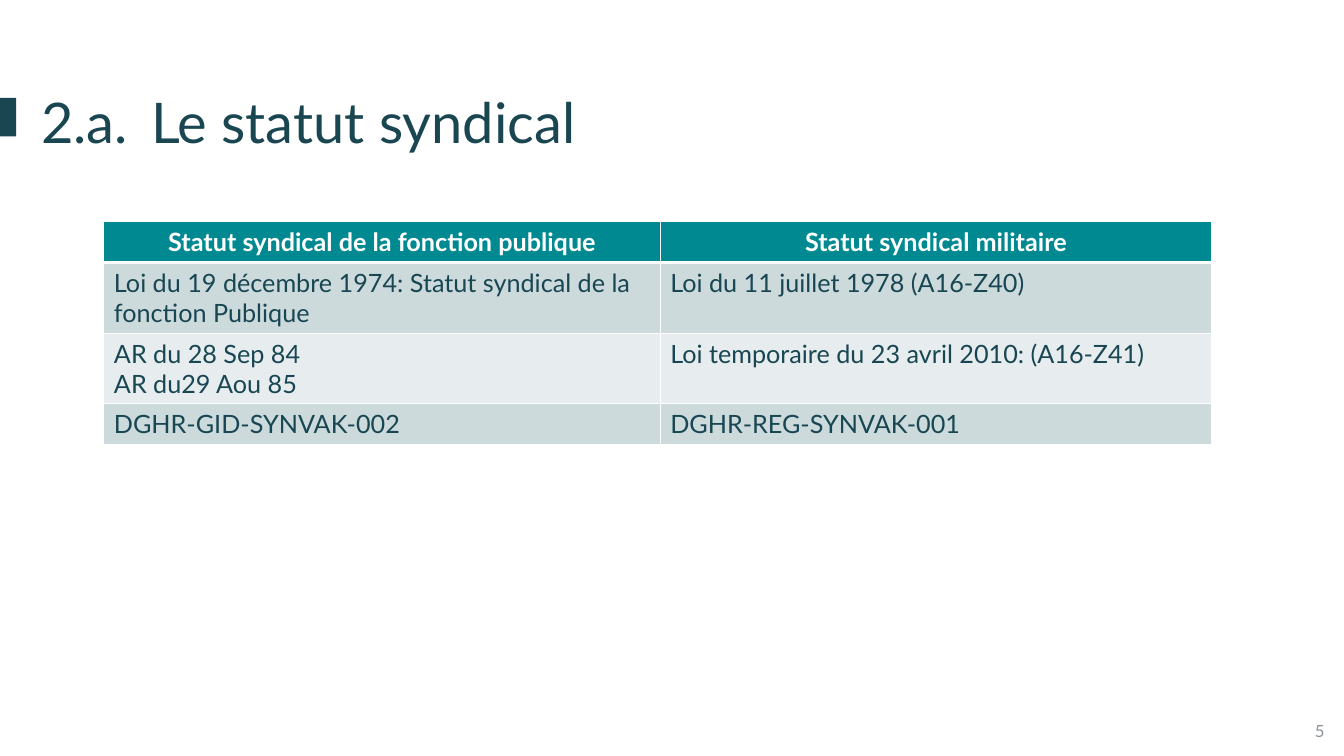
from dataclasses import dataclass

from lxml.etree import SubElement
from pptx import Presentation
from pptx.dml.color import RGBColor
from pptx.enum.shapes import MSO_SHAPE
from pptx.enum.text import MSO_ANCHOR, MSO_AUTO_SIZE, PP_ALIGN
from pptx.oxml.ns import qn
from pptx.slide import Slide
from pptx.table import _Cell
from pptx.text.text import _Paragraph
from pptx.util import Pt

WHITE = RGBColor(0xFF, 0xFF, 0xFF)
DARK = RGBColor(0x1A, 0x46, 0x52)
BODY = RGBColor(0x18, 0x46, 0x52)
GREY = RGBColor(0x8C, 0x94, 0x98)
TEAL = RGBColor(0x00, 0x89, 0x91)
BAND_DARK = RGBColor(0xCC, 0xDA, 0xDC)
BAND_LIGHT = RGBColor(0xE7, 0xED, 0xEE)

COLUMN_WIDTHS = (397.4, 393.9)
THIN, THICK = 1, 3


@dataclass(frozen=True)
class StatuteRow:
    public: str
    military: str
    height: float
    fill: RGBColor


ROWS = (
    StatuteRow("Statut syndical de la fonction publique",
               "Statut syndical militaire", 29.2, TEAL),
    StatuteRow("Loi du 19 décembre 1974: Statut syndical de la fonction Publique",
               "Loi du 11 juillet 1978 (A16-Z40)", 50.4, BAND_DARK),
    StatuteRow("AR du 28 Sep 84\nAR du29 Aou 85",
               "Loi temporaire du 23 avril 2010: (A16-Z41)", 50.4, BAND_LIGHT),
    StatuteRow("DGHR-GID-SYNVAK-002", "DGHR-REG-SYNVAK-001", 29.2, BAND_DARK),
)


def format_paragraph(p: _Paragraph, size: float, color: RGBColor,
                     align: PP_ALIGN = PP_ALIGN.LEFT, bold: bool = False) -> None:
    p.alignment = align
    for r in p.runs:
        for name, value in {"name": "Lato", "size": Pt(size), "bold": bold}.items():
            setattr(r.font, name, value)
        r.font.color.rgb = color


def add_marker(slide: Slide) -> None:
    sp = slide.shapes.add_shape(MSO_SHAPE.RECTANGLE, 0, Pt(70), Pt(11.5), Pt(27.5))
    sp.shadow.inherit = False
    sp.fill.solid()
    sp.fill.fore_color.rgb = DARK
    sp.line.fill.background()


def set_title(slide: Slide) -> None:
    sp = slide.shapes.title
    box = {"left": 22.3, "top": 59, "width": 889.2, "height": 55.4}
    for name, value in box.items():
        setattr(sp, name, Pt(value))
    tf = sp.text_frame
    tf.text = "2.a.\tLe statut syndical"
    tf.vertical_anchor = MSO_ANCHOR.TOP
    tf.auto_size = MSO_AUTO_SIZE.NONE
    p = tf.paragraphs[0]
    indent = Pt(42.5)
    pPr = p._p.get_or_add_pPr()
    pPr.set("marL", str(indent))
    pPr.set("indent", str(-indent))
    format_paragraph(p, 40, DARK)


def set_borders(cell: _Cell, top: float, bottom: float) -> None:
    tcPr = cell._tc.get_or_add_tcPr()
    widths = {"lnL": THIN, "lnR": THIN, "lnT": top, "lnB": bottom}
    for tag, width in widths.items():
        ln = SubElement(tcPr, qn(f"a:{tag}"), w=str(Pt(width)))
        fill = SubElement(ln, qn("a:solidFill"))
        SubElement(fill, qn("a:srgbClr"), val=str(WHITE))


def add_statute_table(slide: Slide) -> None:
    table = slide.shapes.add_table(
        len(ROWS), len(COLUMN_WIDTHS), Pt(74.2), Pt(158.4),
        Pt(sum(COLUMN_WIDTHS)), Pt(sum(row.height for row in ROWS))).table
    for column, width in zip(table.columns, COLUMN_WIDTHS):
        column.width = Pt(width)
    for i, row in enumerate(ROWS):
        table.rows[i].height = Pt(row.height)
        header = i == 0
        for cell, text in zip(table.rows[i].cells, (row.public, row.military)):
            cell.text = text
            set_borders(cell, THICK if i == 1 else THIN, THICK if header else THIN)
            cell.fill.solid()
            cell.fill.fore_color.rgb = row.fill
            for p in cell.text_frame.paragraphs:
                format_paragraph(p, 18, WHITE if header else BODY,
                                 PP_ALIGN.CENTER if header else PP_ALIGN.LEFT, header)


def add_page_number(slide: Slide) -> None:
    tf = slide.shapes.add_textbox(Pt(737.3), Pt(507.6), Pt(216), Pt(28.8)).text_frame
    tf.word_wrap = True
    tf.vertical_anchor = MSO_ANCHOR.MIDDLE
    tf.text = "5"
    format_paragraph(tf.paragraphs[0], 12, GREY, PP_ALIGN.RIGHT)


def main() -> None:
    prs = Presentation()
    prs.slide_width, prs.slide_height = Pt(960), Pt(540)
    slide = prs.slides.add_slide(prs.slide_layouts[5])
    add_marker(slide)
    add_page_number(slide)
    set_title(slide)
    add_statute_table(slide)
    prs.save("out.pptx")


if __name__ == "__main__":
    main()
